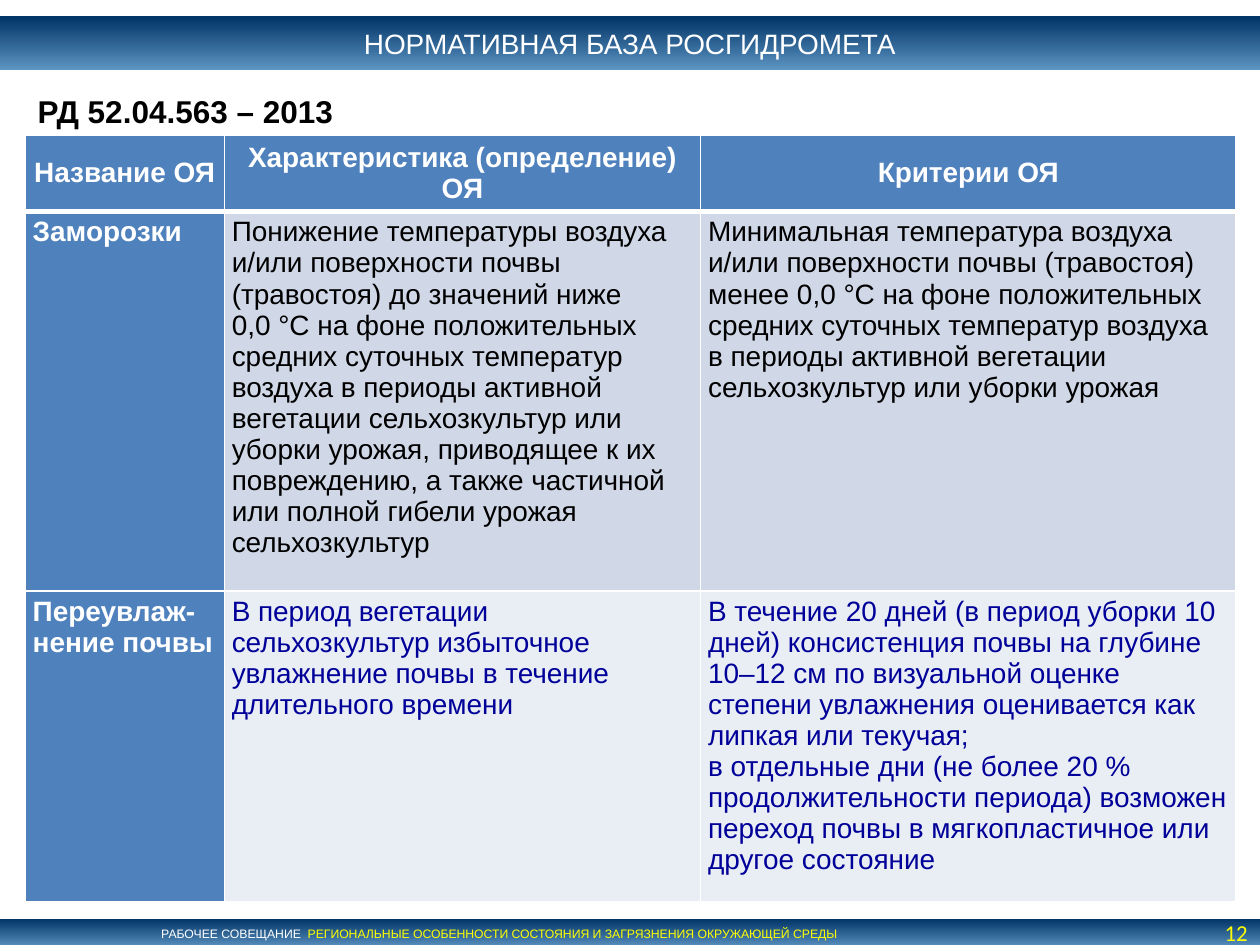
from dataclasses import dataclass

from lxml.etree import SubElement
from pptx import Presentation
from pptx.dml.color import RGBColor
from pptx.enum.shapes import MSO_SHAPE
from pptx.enum.text import MSO_ANCHOR, MSO_AUTO_SIZE, PP_ALIGN
from pptx.oxml.ns import qn
from pptx.util import Pt

WHITE, BLACK, YELLOW, NAVY = "FFFFFF", "000000", "FFFF00", "000099"
HEADER_BLUE = "4F81BD"
COLUMN_WIDTHS = (113.76, 272.16, 306)
ROW_HEIGHTS = (43.92, 216.72, 177.84)


@dataclass
class TextStyle:
    size: float
    color: str
    bold: bool = False
    font: str = "Arial"


@dataclass
class HazardRow:
    name: str
    definition: list[str]
    criteria: list[str]
    color: str
    fill: str


HEADINGS = ("Название ОЯ", "Характеристика (определение) ОЯ", "Критерии ОЯ")
HAZARDS = (
    HazardRow(
        "Заморозки",
        ["Понижение температуры воздуха и/или поверхности почвы (травостоя) до значений ниже",
         "0,0 °C на фоне положительных средних суточных температур воздуха в периоды активной "
         "вегетации сельхозкультур или уборки урожая, приводящее к их повреждению, а также "
         "частичной или полной гибели урожая сельхозкультур"],
        ["Минимальная температура воздуха и/или поверхности почвы (травостоя) менее 0,0 °C на фоне "
         "положительных средних суточных температур воздуха в периоды активной вегетации "
         "сельхозкультур или уборки урожая"],
        BLACK, "D0D8E8"),
    HazardRow(
        "Переувлаж-нение почвы",
        ["В период вегетации сельхозкультур избыточное увлажнение почвы в течение длительного времени"],
        ["В течение 20 дней (в период уборки 10 дней) консистенция почвы на глубине 10–12 см по "
         "визуальной оценке степени увлажнения оценивается как липкая или текучая;",
         "в отдельные дни (не более 20 % продолжительности периода) возможен переход почвы в "
         "мягкопластичное или другое состояние"],
        NAVY, "E9EDF4"),
)


def rgb(value: str) -> RGBColor:
    return RGBColor.from_string(value)


def apply_format(target, values: dict) -> None:
    for attribute, value in values.items():
        setattr(target, attribute, value)


def add_run(paragraph, text: str, style: TextStyle) -> None:
    run = paragraph.add_run()
    run.text = text
    apply_format(run.font, {"name": style.font, "size": Pt(style.size), "bold": style.bold})
    run.font.color.rgb = rgb(style.color)


def place(shape, left: float, top: float, width: float, height: float) -> None:
    apply_format(shape, {"left": Pt(left), "top": Pt(top), "width": Pt(width), "height": Pt(height)})


def fill_band(shape) -> None:
    """Fill a bar with the dark-to-light vertical gradient."""
    shape.fill.gradient()
    shape.fill.gradient_angle = 270
    for stop, color in zip(shape.fill.gradient_stops, ("003366", "5D95C3")):
        stop.color.rgb = rgb(color)
    shape.line.fill.background()


def add_label(slide, box: tuple, text: str, style: TextStyle, align: PP_ALIGN, frame_format: dict) -> None:
    label = slide.shapes.add_textbox(*map(Pt, box))
    apply_format(label.text_frame, frame_format)
    paragraph = label.text_frame.paragraphs[0]
    paragraph.alignment = align
    add_run(paragraph, text, style)


def add_borders(cell, top: float, bottom: float) -> None:
    properties = cell._tc.get_or_add_tcPr()
    for side, width in (("L", 1), ("R", 1), ("T", top), ("B", bottom)):
        border = SubElement(properties, qn(f"a:ln{side}"), w=str(Pt(width)))
        SubElement(SubElement(border, qn("a:solidFill")), qn("a:srgbClr"), val=WHITE)


def write_cell(cell, texts: list[str], style: TextStyle, fill: str, row: int) -> None:
    is_header = row == 0
    add_borders(cell, top=3 if row == 1 else 1, bottom=3 if is_header else 1)
    cell.fill.solid()
    cell.fill.fore_color.rgb = rgb(fill)
    apply_format(cell, {
        "margin_left": Pt(4.32), "margin_right": Pt(4.32),
        "margin_top": Pt(2.88), "margin_bottom": Pt(2.88),
        "vertical_anchor": MSO_ANCHOR.MIDDLE if is_header else MSO_ANCHOR.TOP,
    })
    for index, text in enumerate(texts):
        paragraph = cell.text_frame.add_paragraph() if index else cell.text_frame.paragraphs[0]
        paragraph.alignment = PP_ALIGN.CENTER if is_header else PP_ALIGN.LEFT
        add_run(paragraph, text, style)


def add_hazard_table(slide) -> None:
    table = slide.shapes.add_table(
        len(ROW_HEIGHTS), len(COLUMN_WIDTHS), Pt(14.4), Pt(77.04),
        Pt(sum(COLUMN_WIDTHS)), Pt(sum(ROW_HEIGHTS))).table
    for column, width in zip(table.columns, COLUMN_WIDTHS):
        column.width = Pt(width)
    for table_row, height in zip(table.rows, ROW_HEIGHTS):
        table_row.height = Pt(height)
    heading_style = TextStyle(16, WHITE, bold=True)
    for column, heading in enumerate(HEADINGS):
        write_cell(table.cell(0, column), [heading], heading_style, HEADER_BLUE, 0)
    for row, hazard in enumerate(HAZARDS, start=1):
        write_cell(table.cell(row, 0), [hazard.name], heading_style, HEADER_BLUE, row)
        for column, texts in enumerate((hazard.definition, hazard.criteria), start=1):
            write_cell(table.cell(row, column), texts, TextStyle(16, hazard.color), hazard.fill, row)


def add_title(slide) -> None:
    title = slide.shapes.title
    place(title, 0, 9.36, 720, 30.96)
    fill_band(title)
    apply_format(title.text_frame, {
        "auto_size": MSO_AUTO_SIZE.NONE, "vertical_anchor": MSO_ANCHOR.MIDDLE,
        "margin_top": Pt(5.76), "margin_bottom": Pt(5.76),
    })
    paragraph = title.text_frame.paragraphs[0]
    paragraph.alignment = PP_ALIGN.CENTER
    add_run(paragraph, "НОРМАТИВНАЯ БАЗА РОСГИДРОМЕТА", TextStyle(16, WHITE))


def add_footer(slide) -> None:
    footer = slide.shapes.add_shape(MSO_SHAPE.RECTANGLE, 0, Pt(524.88), Pt(720), Pt(17.28))
    footer.shadow.inherit = False
    fill_band(footer)
    apply_format(footer.text_frame, {
        "margin_left": Pt(92.16), "margin_top": 0, "margin_bottom": 0,
        "vertical_anchor": MSO_ANCHOR.MIDDLE, "word_wrap": True,
    })
    paragraph = footer.text_frame.paragraphs[0]
    paragraph.alignment = PP_ALIGN.LEFT
    add_run(paragraph, "РАБОЧЕЕ СОВЕЩАНИЕ  ", TextStyle(7, WHITE))
    add_run(paragraph, "РЕГИОНАЛЬНЫЕ ОСОБЕННОСТИ СОСТОЯНИЯ И ЗАГРЯЗНЕНИЯ ОКРУЖАЮЩЕЙ СРЕДЫ",
            TextStyle(7, YELLOW))


def main() -> None:
    presentation = Presentation()
    apply_format(presentation, {"slide_width": Pt(720), "slide_height": Pt(540)})
    slide = presentation.slides.add_slide(presentation.slide_layouts.get_by_name("Title Only"))
    add_footer(slide)
    add_hazard_table(slide)
    add_label(slide, (14.4, 48.96, 190.08, 28.8), "РД 52.04.563 – 2013",
              TextStyle(18, BLACK, bold=True), PP_ALIGN.LEFT, {"word_wrap": False})
    add_title(slide)
    add_label(slide, (663.12, 524.88, 56.88, 15.84), "12",
              TextStyle(13, YELLOW, font="Calibri"), PP_ALIGN.RIGHT,
              {"margin_top": 0, "margin_bottom": 0, "word_wrap": True,
               "vertical_anchor": MSO_ANCHOR.MIDDLE})
    presentation.save("out.pptx")


if __name__ == "__main__":
    main()
